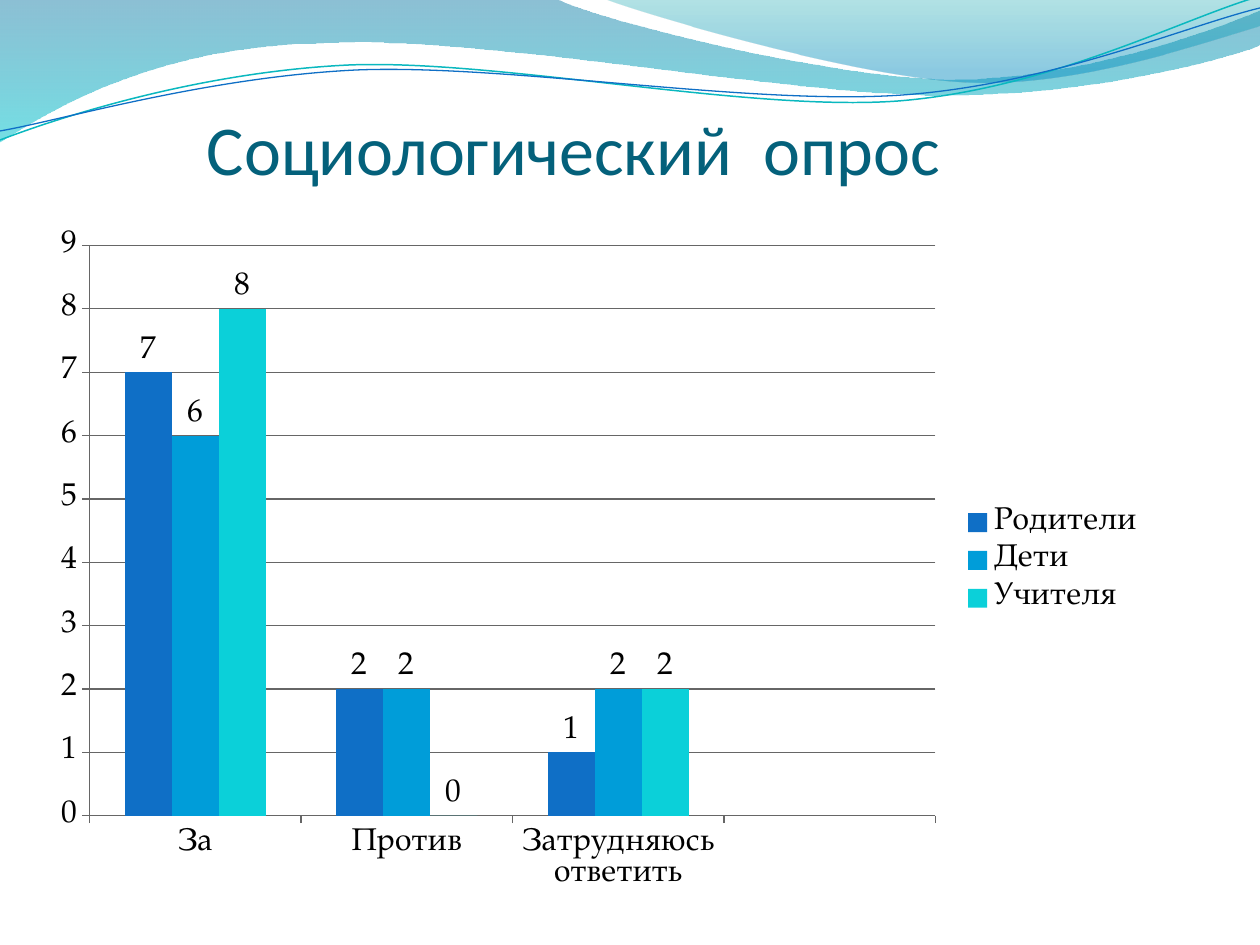
"""Build a survey slide with a wave header and a clustered column chart."""
from lxml import etree
from pptx import Presentation
from pptx import util as u
from pptx.chart.data import CategoryChartData
from pptx.dml.color import RGBColor
from pptx.enum import chart as charts, text
from pptx.oxml.ns import qn

SCALE = 914400 / 126
BLACK = RGBColor(0x00, 0x00, 0x00)
GREY = RGBColor(0x66, 0x66, 0x66)
TITLE_TEAL = RGBColor(0x04, 0x61, 0x7B)
BLUE = RGBColor(0x0F, 0x6F, 0xC6)
SKY = RGBColor(0x00, 0x9D, 0xD9)
CYAN = RGBColor(0x0B, 0xD0, 0xD9)
LINE_TEAL = RGBColor(0x0A, 0xB8, 0xBF)
DEEP_BLUE = RGBColor(0x00, 0x74, 0xA1)
AQUA = RGBColor(0x00, 0xC6, 0xCF)
TEAL = RGBColor(0x00, 0xA1, 0xA9)
OCEAN = RGBColor(0x00, 0x8B, 0xBF)

LEFT_WAVE = [
    (-1, -1), (556, -1),
    (600, 21, 837, 79, 955, 79), (1075, 79, 1207, 33, 1260, 11),
    (1261, 45),
    (1239, 55, 1096, 96, 940, 95), (784, 95, 481, 35, 324, 43),
    (163, 45, 58, 105, -1, 142),
]
RIGHT_WAVE = [
    (604, -1), (641, 14, 859, 78, 969, 82),
    (1079, 87, 1211, 40, 1260, 26), (1260, 0),
]
TEAL_LINE = [
    (0, 140), (60, 117, 199, 72, 349, 65),
    (498, 59, 747, 112, 898, 101), (1049, 89, 1182, 19, 1257, -3),
]
BLUE_LINE = [
    (0, 131), (59, 121, 207, 77, 357, 70),
    (508, 64, 752, 106, 903, 95), (1053, 84, 1186, 26, 1260, 8),
]
CATEGORIES = ["За", "Против", "Затрудняюсь ответить", ""]
SERIES = [
    ("Родители", (7, 2, 1, None), BLUE),
    ("Дети", (6, 2, 2, None), SKY),
    ("Учителя", (8, 0, 2, None), CYAN),
]


def px(*lengths):
    """Turn px lengths into EMU."""
    return [u.Emu(round(length * SCALE)) for length in lengths]


def bend(shape, parts):
    """Merge each curve's three line segments into one cubic curve."""
    lines = iter(list(shape.element.iter(qn("a:lnTo"))))
    for part in parts:
        first = next(lines)
        if len(part) == 2:
            continue
        curve = etree.Element(qn("a:cubicBezTo"))
        first.addprevious(curve)
        for line in (first, next(lines), next(lines)):
            curve.append(line[0])
            line.getparent().remove(line)


def add_outline(page, path, close):
    """Add a freeform that follows the path."""
    start, *parts = path
    points = [px(*part[i:i + 2]) for part in parts for i in range(0, len(part), 2)]
    builder = page.shapes.build_freeform(*px(*start), scale=1.0)
    builder.add_line_segments(points, close=close)
    shape = builder.convert_to_shape()
    shape.shadow.inherit = False
    bend(shape, parts)
    return shape


def add_wave(page, path, stops):
    """Add a closed wave with a translucent downward gradient."""
    wave = add_outline(page, path, True)
    wave.line.fill.background()
    wave.fill.gradient()
    wave.fill.gradient_angle = 270
    for stop, (position, colour, _) in zip(wave.fill.gradient_stops, stops):
        stop.position = position
        stop.color.rgb = colour
    colours = wave.element.spPr.iter(qn("a:srgbClr"))
    for element, (_, _, alpha) in zip(colours, stops):
        etree.SubElement(element, qn("a:alpha")).set("val", str(alpha * 1000))


def add_curve(page, path, colour, width):
    """Add an open curved line."""
    curve = add_outline(page, path, False)
    curve.fill.background()
    curve.line.color.rgb = colour
    curve.line.width = u.Pt(width)


def add_title(page, words):
    """Add the title, anchored to the bottom of its box."""
    box = page.shapes.add_textbox(*px(207, 29, 879, 160))
    frame = box.text_frame
    frame.word_wrap = True
    frame.vertical_anchor = text.MSO_ANCHOR.BOTTOM
    frame.margin_left = frame.margin_right = frame.margin_bottom = 0
    frame.text = words
    font = frame.paragraphs[0].runs[0].font
    font.name = "Calibri"
    font.size = u.Pt(40)
    font.color.rgb = TITLE_TEAL


def drop_blank_labels(plot):
    """Leave the last category slot without a label."""
    for series in plot.series:
        labels = list(series._element.find(qn("c:cat")).iter(qn("c:pt")))
        labels[-1].getparent().remove(labels[-1])


def add_survey_chart(page):
    """Add the column chart of survey answers."""
    data = CategoryChartData()
    data.categories = CATEGORIES
    for name, values, _ in SERIES:
        data.add_series(name, values)
    chart = page.shapes.add_chart(
        charts.XL_CHART_TYPE.COLUMN_CLUSTERED, *px(39, 216, 1119, 689), data).chart
    chart.has_title = False
    chart.font.name = "TeX Gyre Pagella"
    chart.font.size = u.Pt(18)
    chart.font.color.rgb = BLACK
    chart.has_legend = True
    chart.legend.position = charts.XL_LEGEND_POSITION.RIGHT
    chart.legend.include_in_layout = False
    plot = chart.plots[0]
    plot.vary_by_categories = False
    plot.gap_width = 150
    for series, (_, _, colour) in zip(plot.series, SERIES):
        series.format.fill.solid()
        series.format.fill.fore_color.rgb = colour
        series.data_labels.show_value = True
    drop_blank_labels(plot)
    grid = chart.value_axis.major_gridlines
    for part in (chart.category_axis, chart.value_axis, grid):
        part.format.line.color.rgb = GREY
        part.format.line.width = u.Pt(0.75)
    for axis in (chart.category_axis, chart.value_axis):
        axis.major_tick_mark = charts.XL_TICK_MARK.OUTSIDE


def main():
    """Build and save the slide."""
    deck = Presentation()
    deck.slide_width, deck.slide_height = px(1260, 945)
    page = deck.slides.add_slide(deck.slide_layouts[6])
    add_wave(page, LEFT_WAVE, [(0, DEEP_BLUE, 45), (1, AQUA, 55)])
    add_wave(page, RIGHT_WAVE, [(0, TEAL, 30), (0.8, OCEAN, 45)])
    add_curve(page, TEAL_LINE, LINE_TEAL, 0.85)
    add_curve(page, BLUE_LINE, BLUE, 0.75)
    add_title(page, "Социологический  опрос")
    add_survey_chart(page)
    deck.save("out.pptx")


if __name__ == "__main__":
    main()
